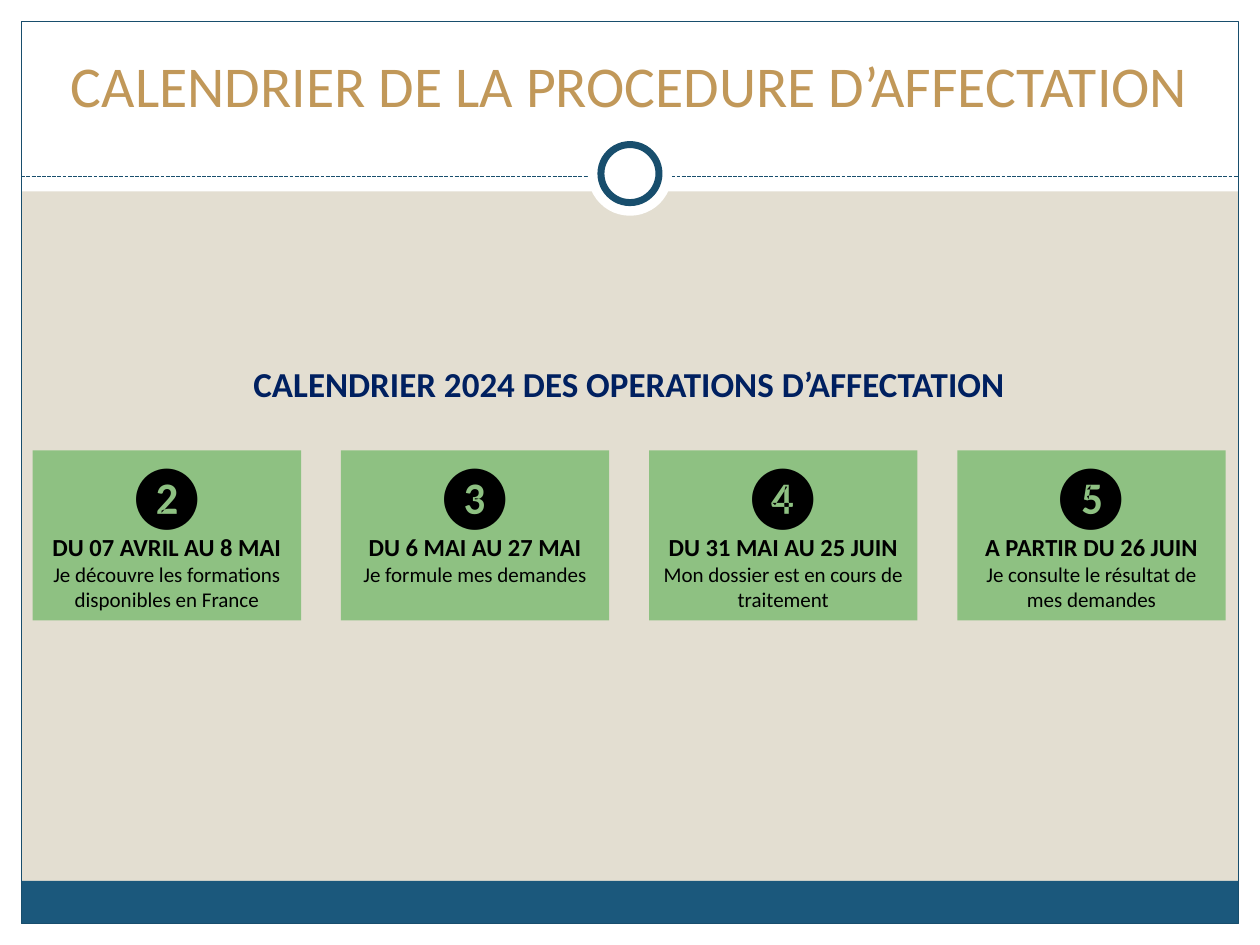
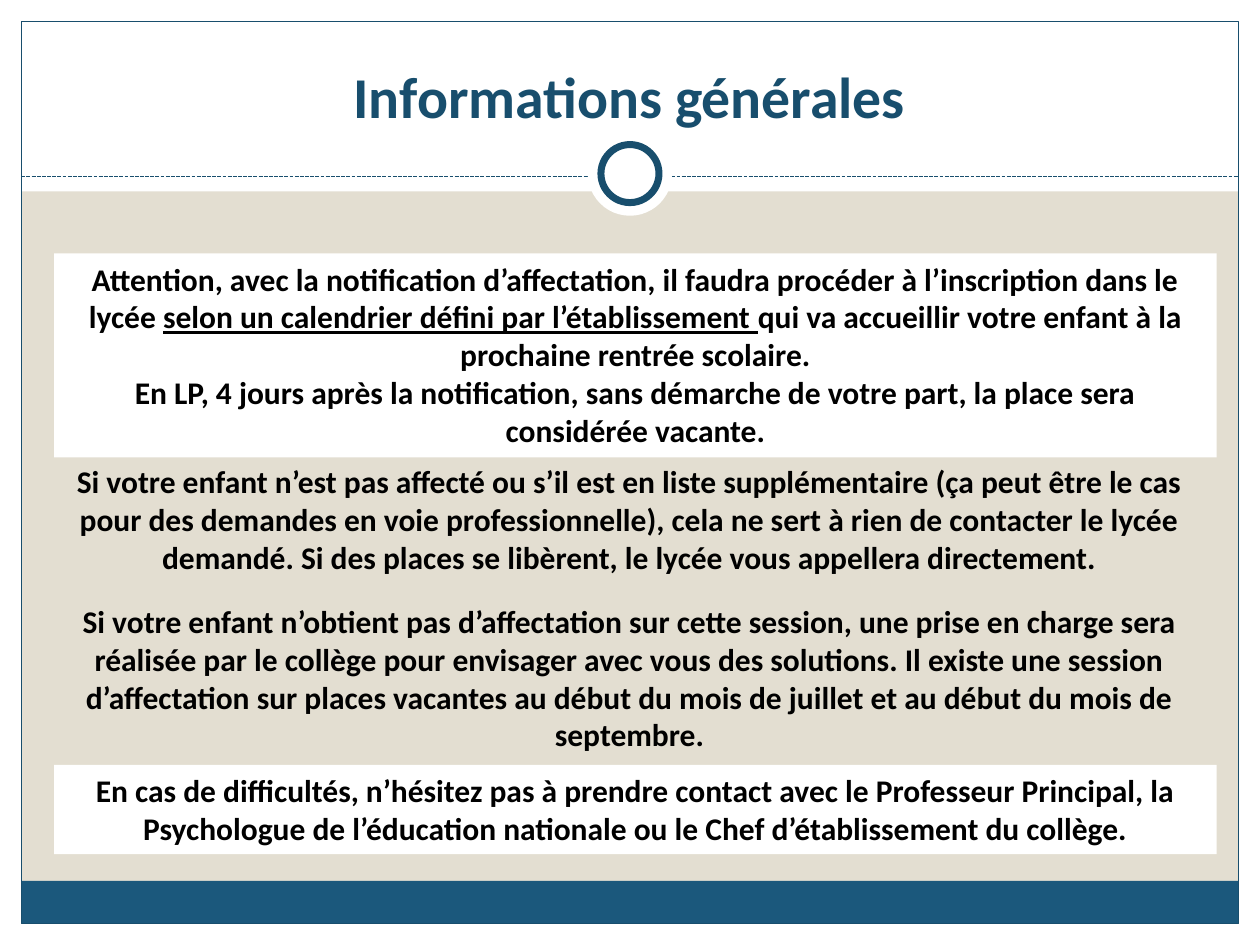
from pptx import Presentation
from pptx.dml.color import RGBColor
from pptx.enum.dml import MSO_LINE
from pptx.enum.shapes import MSO_CONNECTOR, MSO_SHAPE
from pptx.enum.text import MSO_ANCHOR, MSO_AUTO_SIZE, PP_ALIGN
from pptx.oxml import parse_xml
from pptx.oxml.ns import nsdecls
from pptx.util import Cm, Pt

RECT, OVAL = MSO_SHAPE.RECTANGLE, MSO_SHAPE.OVAL
STRAIGHT, DASH = MSO_CONNECTOR.STRAIGHT, MSO_LINE.SQUARE_DOT
TOP, BOTTOM = MSO_ANCHOR.TOP, MSO_ANCHOR.BOTTOM
NO_FIT, CENTER = MSO_AUTO_SIZE.NONE, PP_ALIGN.CENTER

COLOURS = {
    "sand": "E3DED1",
    "white": "FFFFFF",
    "black": "000000",
    "band": "1B587C",
    "frame": "184E6D",
    "gold": "C19859",
    "green": "8EC182",
    "navy": "002060",
}
PAGE_WIDTH, PAGE_HEIGHT = 25.4, 19.05
MARGIN = 0.43
HEADER_HEIGHT = 3.86
RULE_TOP = 3.56
RING_CENTRE = (PAGE_WIDTH / 2, 3.5)

NUMERAL = {"size": Pt(36), "bold": False}
DATES = {"size": Pt(14), "bold": True}
ACTION = {"size": Pt(12), "bold": False}
NOTICE = {"size": Pt(18), "bold": True}
UNDERLINED = {**NOTICE, "underline": True}
HEADING = {"size": Pt(20), "bold": True}

STEPS = [
    ("❷", "DU 07 AVRIL AU 8 MAI", "Je découvre les formations disponibles en France"),
    ("❸", "DU 6 MAI AU 27 MAI", "Je formule mes demandes"),
    ("❹", "DU 31 MAI AU 25 JUIN", "Mon dossier est en cours de traitement"),
    ("❺", "A PARTIR DU 26 JUIN", "Je consulte le résultat de mes demandes"),
]

# Each notice: box (left, top, width, height), fill, paragraphs of (text, format) spans
NOTICES = [
    ((1.09, 5.11, 23.44, 4.11), "white", [
        [("Attention, avec la notification d’affectation, il faudra procéder à "
          "l’inscription dans le lycée ", NOTICE),
         ("selon un calendrier défini par l’établissement ", UNDERLINED),
         ("qui va accueillir votre enfant à la prochaine rentrée scolaire.", NOTICE)],
        [("En LP, 4 jours après la notification, sans démarche de votre part, "
          "la place sera considérée vacante.", NOTICE)],
    ]),
    ((0.97, 9.19, 23.44, 2.57), None, [
        [("Si votre enfant n’est pas affecté ou s’il est en liste supplémentaire "
          "(ça peut être le cas pour des demandes en voie professionnelle), cela ne "
          "sert à rien de contacter le lycée demandé. Si des places se libèrent, le "
          "lycée vous appellera directement.", NOTICE)],
    ]),
    ((0.97, 12.01, 23.44, 3.33), None, [
        [("Si votre enfant n’obtient pas d’affectation sur cette session, une prise "
          "en charge sera réalisée par le collège pour envisager avec vous des "
          "solutions. Il existe une session d’affectation sur places vacantes au "
          "début du mois de juillet et au début du mois de septembre.", NOTICE)],
    ]),
    ((1.09, 15.42, 23.44, 1.8), "white", [
        [("En cas de difficultés, n’hésitez pas à prendre contact avec le Professeur "
          "Principal, la Psychologue de l’éducation nationale ou le Chef "
          "d’établissement du collège.", NOTICE)],
    ]),
]


def colour(name):
    return RGBColor.from_string(COLOURS[name])


def add_block(page, kind, box, fill=None, line=None, line_width=0.75):
    block = page.shapes.add_shape(kind, *map(Cm, box))
    block.shadow.inherit = False
    if fill:
        block.fill.solid()
        block.fill.fore_color.rgb = colour(fill)
    else:
        block.fill.background()
    if line:
        block.line.color.rgb = colour(line)
        block.line.width = Pt(line_width)
    else:
        block.line.fill.background()
    return block


def write(shape, paragraphs, ink="black", anchor=TOP):
    """Fill a shape with centred paragraphs, each a list of (text, format) spans."""
    frame = shape.text_frame
    frame.word_wrap = True
    frame.auto_size = NO_FIT
    frame.vertical_anchor = anchor
    for index, spans in enumerate(paragraphs):
        para = frame.add_paragraph() if index else frame.paragraphs[0]
        para.alignment = CENTER
        for text, style in spans:
            span = para.add_run()
            span.text = text
            span.font.name = "Calibri"
            span.font.color.rgb = colour(ink)
            for name, value in style.items():
                setattr(span.font, name, value)


def add_rule(page):
    rule = page.shapes.add_connector(
        STRAIGHT, Cm(MARGIN), Cm(RULE_TOP), Cm(PAGE_WIDTH - MARGIN), Cm(RULE_TOP))
    rule.line.color.rgb = colour("frame")
    rule.line.width = Pt(0.75)
    rule.line.dash_style = DASH
    rule.element.spPr.append(parse_xml(f"<a:effectLst {nsdecls('a')}/>"))


def add_disc(page, diameter, **paint):
    x, y = RING_CENTRE
    add_block(page, OVAL, (x - diameter / 2, y - diameter / 2, diameter, diameter), **paint)


def add_decor(page):
    inner_width = PAGE_WIDTH - 2 * MARGIN
    for box in (
        (0, PAGE_HEIGHT - MARGIN, PAGE_WIDTH, MARGIN),
        (0, 0, PAGE_WIDTH, HEADER_HEIGHT),
        (0, 0, MARGIN, PAGE_HEIGHT),
        (PAGE_WIDTH - MARGIN, 0, MARGIN, PAGE_HEIGHT),
    ):
        add_block(page, RECT, box, "white")
    add_block(page, RECT, (MARGIN, 17.76, inner_width, 0.86), "band")
    add_block(page, RECT, (MARGIN, MARGIN, inner_width, PAGE_HEIGHT - 2 * MARGIN), line="frame")
    add_rule(page)
    add_disc(page, 1.7, fill="white")
    add_disc(page, 1.17, fill="white", line="frame", line_width=4)


def prepare_layout(layout, page):
    """Draw the shared decor on a still empty page, then move it into the layout."""
    layout.background.fill.solid()
    layout.background.fill.fore_color.rgb = colour("sand")
    add_decor(page)
    decor = [shape for shape in page.shapes if not shape.is_placeholder]
    for number, shape in enumerate(decor, start=100):
        shape.element.xpath(".//p:cNvPr")[0].set("id", str(number))
        layout.shapes.element.append(shape.element)


def set_title(page, text, height, ink, bold):
    title = page.shapes.title
    title.left, title.top, title.width, title.height = map(Cm, (0.84, 0.64, 23.7, height))
    write(title, [[(text, {"size": Pt(33), "bold": bold})]], ink, BOTTOM)


def add_step_cards(page, box):
    left, top, width, height = box
    card_width = 5.41
    pitch = (width - card_width) / (len(STEPS) - 1)
    for index, texts in enumerate(STEPS):
        card = add_block(page, RECT, (left + index * pitch, top, card_width, height), "green")
        write(card, [[part] for part in zip(texts, (NUMERAL, DATES, ACTION))])


def fill_calendar(page):
    set_title(page, "CALENDRIER DE LA PROCEDURE D’AFFECTATION", 1.88, "gold", False)
    add_step_cards(page, (0.66, 9.08, 24.05, 3.43))
    heading = page.shapes.add_textbox(*map(Cm, (0.48, 7.19, 24.41, 1.12)))
    write(heading, [[("CALENDRIER 2024 DES OPERATIONS D’AFFECTATION", HEADING)]], "navy")


def fill_information(page):
    set_title(page, "Informations générales", 2.11, "frame", True)
    for box, fill, paragraphs in NOTICES:
        write(add_block(page, RECT, box, fill), paragraphs)


def main():
    deck = Presentation()
    deck.slide_width, deck.slide_height = Cm(PAGE_WIDTH), Cm(PAGE_HEIGHT)
    layout = deck.slide_layouts.get_by_name("Title Only")
    calendar, information = (deck.slides.add_slide(layout) for _ in range(2))
    prepare_layout(layout, calendar)
    fill_calendar(calendar)
    fill_information(information)
    deck.save("out.pptx")


if __name__ == "__main__":
    main()
